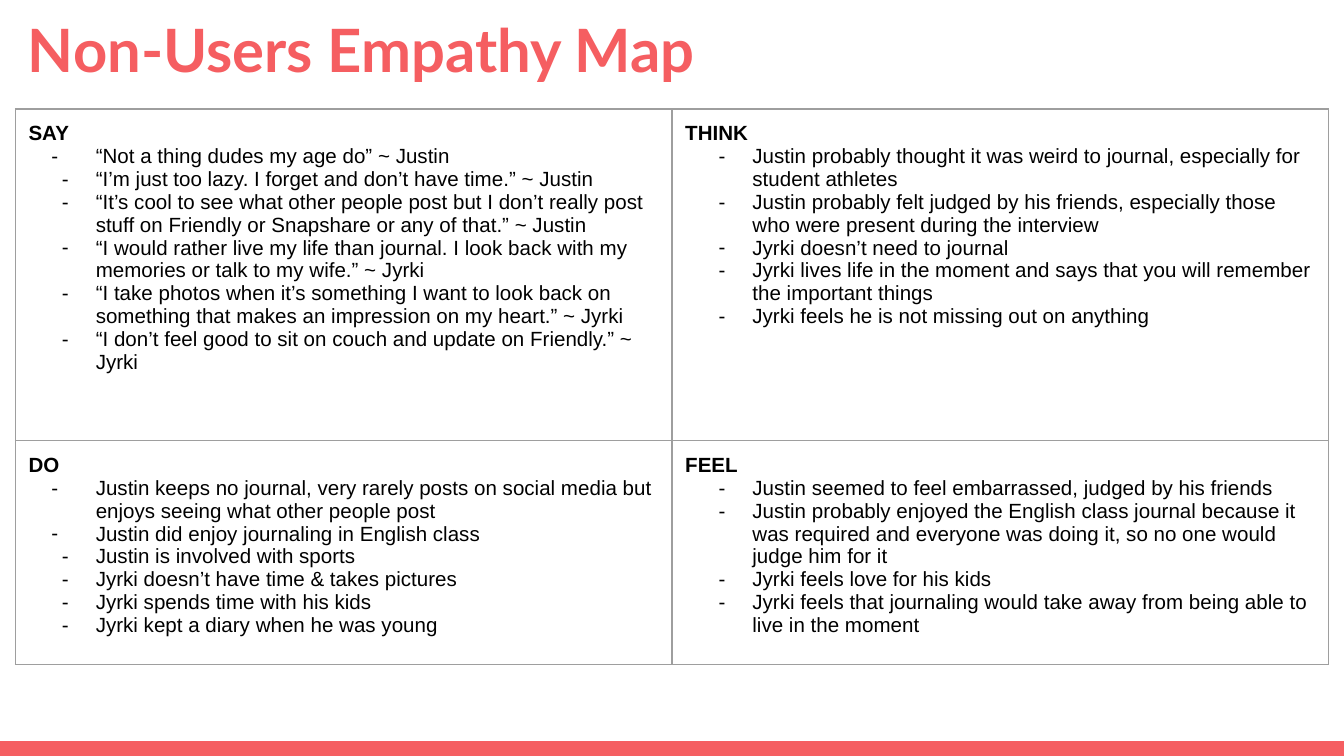
import pptx
import pptx.util
import pptx.dml.color
import pptx.enum.shapes
import pptx.enum.text
import pptx.oxml.ns
from lxml import etree

Cm = pptx.util.Cm
Pt = pptx.util.Pt
qn = pptx.oxml.ns.qn

COLORS = {"coral": "F55E61", "text": "000000", "border": "9E9E9E", "back": "FFFFFF"}
INSET = Cm(0.25)
INDENT = Cm(1.27)
NEAR = Cm(0.64)
FAR = Cm(0.84)

# Each cell: heading, number of leading bullets that hang further out, items
CELLS = [
    [
        ("SAY", 1, [
            "“Not a thing dudes my age do” ~ Justin",
            "“I’m just too lazy. I forget and don’t have time.” ~ Justin",
            "“It’s cool to see what other people post but I don’t really post "
            "stuff on Friendly or Snapshare or any of that.” ~ Justin",
            "“I would rather live my life than journal. I look back with my "
            "memories or talk to my wife.” ~ Jyrki",
            "“I take photos when it’s something I want to look back on "
            "something that makes an impression on my heart.” ~ Jyrki",
            "“I don’t feel good to sit on couch and update on Friendly.” ~ Jyrki",
        ]),
        ("THINK", 0, [
            "Justin probably thought it was weird to journal, especially for "
            "student athletes",
            "Justin probably felt judged by his friends, especially those who "
            "were present during the interview",
            "Jyrki doesn’t need to journal",
            "Jyrki lives life in the moment and says that you will remember "
            "the important things",
            "Jyrki feels he is not missing out on anything",
        ]),
    ],
    [
        ("DO", 2, [
            "Justin keeps no journal, very rarely posts on social media but "
            "enjoys seeing what other people post",
            "Justin did enjoy journaling in English class",
            "Justin is involved with sports",
            "Jyrki doesn’t have time & takes pictures",
            "Jyrki spends time with his kids",
            "Jyrki kept a diary when he was young",
        ]),
        ("FEEL", 0, [
            "Justin seemed to feel embarrassed, judged by his friends",
            "Justin probably enjoyed the English class journal because it was "
            "required and everyone was doing it, so no one would judge him for it",
            "Jyrki feels love for his kids",
            "Jyrki feels that journaling would take away from being able to "
            "live in the moment",
        ]),
    ],
]


def color(name):
    return pptx.dml.color.RGBColor.from_string(COLORS[name])


def add_run(para, text, size, font, tint, bold=False):
    run = para.add_run()
    run.text = text
    run.font.size = Pt(size)
    run.font.name = font
    run.font.bold = bold
    run.font.color.rgb = color(tint)


def set_inset(box):
    box.margin_left = box.margin_right = INSET
    box.margin_top = box.margin_bottom = INSET


def add_bar(slide):
    bar = slide.shapes.add_shape(
        pptx.enum.shapes.MSO_SHAPE.RECTANGLE, 0, Cm(14.01), Cm(25.4), Cm(0.28))
    bar.shadow.inherit = False
    bar.fill.solid()
    bar.fill.fore_color.rgb = color("coral")
    bar.line.fill.background()


def add_title(slide, text):
    frame = slide.shapes.add_textbox(Cm(0.28), 0, Cm(24.82), Cm(1.6)).text_frame
    frame.word_wrap = True
    frame.vertical_anchor = pptx.enum.text.MSO_ANCHOR.TOP
    set_inset(frame)
    add_run(frame.paragraphs[0], text, 32, "Lato", "coral", True)


def set_bullet(para, hang):
    props = para._p.get_or_add_pPr()
    props.set("marL", str(INDENT))
    props.set("indent", str(-hang))
    etree.SubElement(props, qn("a:buFont")).set("typeface", "Arial")
    etree.SubElement(props, qn("a:buChar")).set("char", "-")


def set_border(cell):
    props = cell._tc.get_or_add_tcPr()
    for spot, side in enumerate(("lnL", "lnR", "lnT", "lnB")):
        line = etree.Element(qn("a:" + side), w=str(Pt(0.75)))
        fill = etree.SubElement(line, qn("a:solidFill"))
        etree.SubElement(fill, qn("a:srgbClr")).set("val", COLORS["border"])
        props.insert(spot, line)


def fill_cell(cell, head, wide, items):
    """Write a bold heading and dashes; the first `wide` dashes hang further."""
    set_inset(cell)
    cell.fill.solid()
    cell.fill.fore_color.rgb = color("back")
    set_border(cell)
    frame = cell.text_frame
    add_run(frame.paragraphs[0], head, 11, "Arial", "text", True)
    for spot, item in enumerate(items):
        para = frame.add_paragraph()
        set_bullet(para, FAR if spot < wide else NEAR)
        add_run(para, item, 11, "Arial", "text")


def add_map(slide):
    heights = [Cm(6.27), Cm(3.96)]
    width = Cm(12.41)
    table = slide.shapes.add_table(
        2, 2, Cm(0.29), Cm(2.06), 2 * width, sum(heights)).table
    table.first_row = table.horz_banding = False
    for col in table.columns:
        col.width = width
    for r, row in enumerate(CELLS):
        table.rows[r].height = heights[r]
        for c, content in enumerate(row):
            fill_cell(table.cell(r, c), *content)


def main():
    deck = pptx.Presentation()
    deck.slide_width = Cm(25.4)
    deck.slide_height = Cm(14.29)
    slide = deck.slides.add_slide(deck.slide_layouts[6])
    add_bar(slide)
    add_title(slide, "Non-Users Empathy Map")
    add_map(slide)
    deck.save("out.pptx")


if __name__ == "__main__":
    main()
